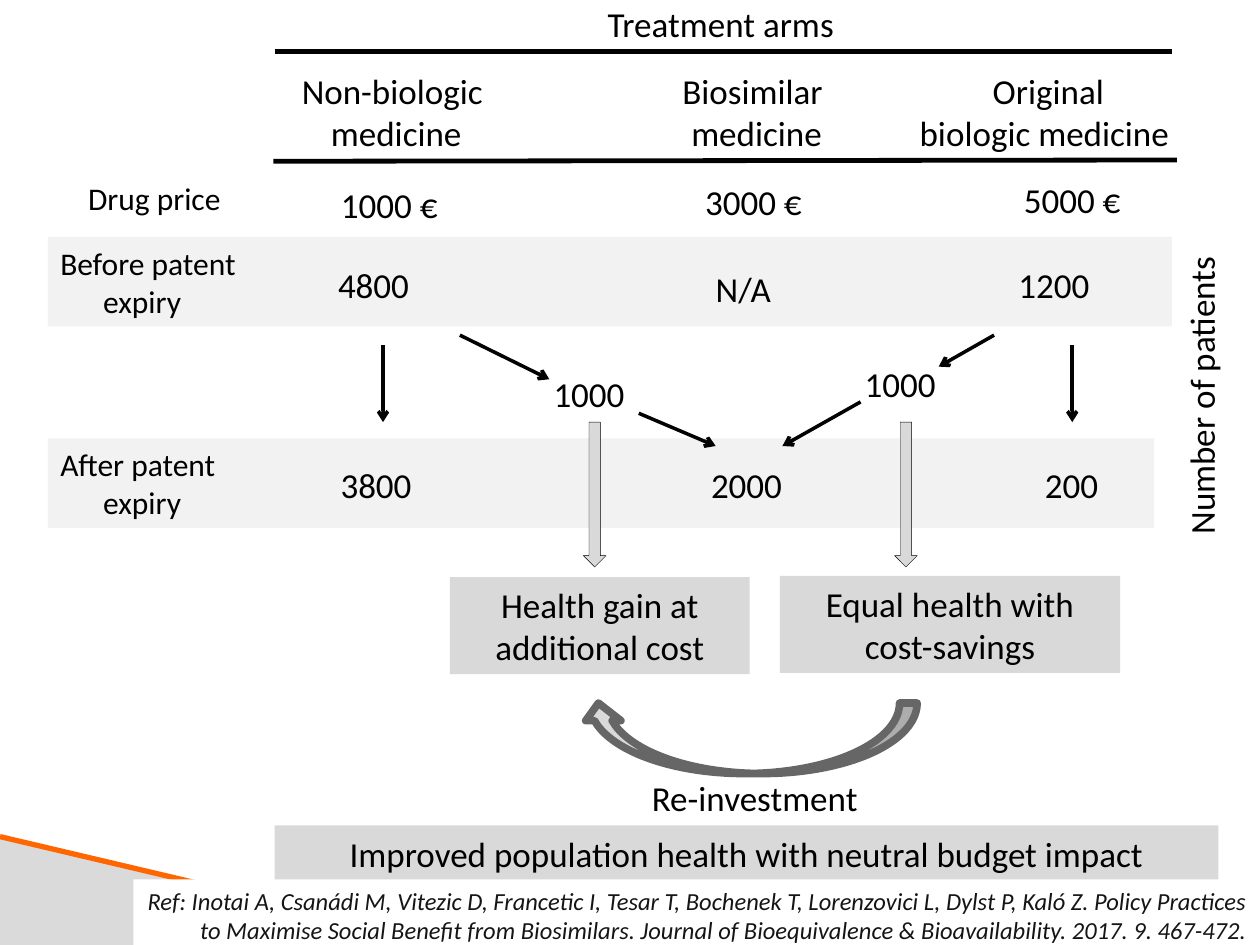
from lxml import etree
from pptx import Presentation
from pptx.dml.color import RGBColor
from pptx.enum.shapes import MSO_CONNECTOR, MSO_SHAPE
from pptx.enum.text import MSO_ANCHOR, MSO_AUTO_SIZE, PP_ALIGN
from pptx.oxml.ns import qn
from pptx.util import Inches, Pt

LEFT, CENTER, RIGHT = PP_ALIGN.LEFT, PP_ALIGN.CENTER, PP_ALIGN.RIGHT
RECTANGLE, TRIANGLE = MSO_SHAPE.RECTANGLE, MSO_SHAPE.RIGHT_TRIANGLE
DOWN_ARROW, CURVED_ARROW = MSO_SHAPE.DOWN_ARROW, MSO_SHAPE.CURVED_UP_ARROW
MIDDLE, TOP = MSO_ANCHOR.MIDDLE, MSO_ANCHOR.TOP
FIT_TEXT, STRAIGHT = MSO_AUTO_SIZE.SHAPE_TO_FIT_TEXT, MSO_CONNECTOR.STRAIGHT

COLUMNS, ROWS = 100, 75
WIDTH, HEIGHT = Inches(10), Inches(7.5)
FONT = "Calibri"
BLACK, INK, REFERENCE_INK = "000000", "020202", "151515"
WHITE, BAND, PANEL, CORNER = "FFFFFF", "F2F2F2", "D9D9D9", "DADADA"
ORANGE, DARK_GREY = "FF6600", "666666"
LINE_HEIGHT = 4.4


def color(value):
    return RGBColor.from_string(value)


class SlideBuilder:
    def __init__(self, slide):
        self.slide = slide

    def place(self, column, row):
        return round(column * WIDTH / COLUMNS), round(row * HEIGHT / ROWS)

    def set_text(self, shape, lines, size=20, align=CENTER, ink=BLACK,
                 italic=False, anchor=TOP, wrap=True, indent=0):
        frame = shape.text_frame
        frame.word_wrap = wrap
        frame.auto_size = FIT_TEXT
        frame.vertical_anchor = anchor
        for index, line in enumerate(lines):
            para = frame.add_paragraph() if index else frame.paragraphs[0]
            para.text = line
            para.alignment = align
            para.font.name = FONT
            para.font.size = Pt(size)
            para.font.italic = italic
            para.font.color.rgb = color(ink)
            if index and indent:
                para._p.get_or_add_pPr().set("marL", str(Inches(indent)))

    def shape(self, kind, column, row, columns, rows, fill, outline=None, weight=0):
        shape = self.slide.shapes.add_shape(
            kind, *self.place(column, row), *self.place(columns, rows))
        shape.shadow.inherit = False
        shape.fill.solid()
        shape.fill.fore_color.rgb = color(fill)
        if outline:
            shape.line.color.rgb = color(outline)
            shape.line.width = Pt(weight)
        else:
            shape.line.fill.background()
        return shape

    def panel(self, column, row, columns, rows, fill, lines, **style):
        panel = self.shape(RECTANGLE, column, row, columns, rows, fill)
        self.set_text(panel, lines, anchor=MIDDLE, **style)

    def text(self, column, row, columns, lines, rotation=0, **style):
        box = self.slide.shapes.add_textbox(
            *self.place(column, row),
            *self.place(columns, LINE_HEIGHT + 3.3 * (len(lines) - 1)))
        box.rotation = rotation
        self.set_text(box, lines, **style)

    def line(self, start, end, weight=2.0, ink=INK, arrow=False):
        line = self.slide.shapes.add_connector(
            STRAIGHT, *self.place(*start), *self.place(*end))
        line.line.color.rgb = color(ink)
        line.line.width = Pt(weight)
        if arrow:
            etree.SubElement(line.line._get_or_add_ln(), qn("a:tailEnd"), type="arrow")
        etree.SubElement(line._element.spPr, qn("a:effectLst"))


def main():
    deck = Presentation()
    deck.slide_width, deck.slide_height = WIDTH, HEIGHT
    page = SlideBuilder(deck.slides.add_slide(deck.slide_layouts[6]))

    page.shape(TRIANGLE, 0, 66.4, 37.2, 8.6, CORNER)
    page.line((0, 66.4), (36.5, 75), 3, ORANGE)

    for row, columns, period in ((18.8, 89.2, "Before patent"), (34.8, 87.8, "After patent")):
        page.panel(3.8, row, columns, 7.1, BAND, [period, "expiry"],
                   size=18, align=LEFT, indent=0.34)

    for column, columns, lines in (
        (22.9, 17.1, ["Non-biologic ", "medicine"]),
        (53.1, 13.9, ["Biosimilar ", "medicine"]),
        (67.1, 32.2, ["Original", "biologic medicine "]),
    ):
        page.text(column, 5, columns, lines, wrap=columns > 20)

    for column, row, columns, value in (
        (26, 14.1, 9.8, "1000 €"), (54.9, 13.8, 9.8, "3000 €"), (80.2, 13.7, 9.8, "5000 €"),
        (25.8, 20.4, 7.7, "4800"), (55.8, 20.7, 6.4, "N/A"), (79.8, 20.4, 7.7, "1200"),
        (42.9, 29.1, 7.7, "1000"), (67.6, 28.3, 7.7, "1000"),
        (26, 36.3, 7.7, "3800"), (55.4, 36.3, 7.7, "2000"), (81.9, 36.3, 6.3, "200"),
        (47.1, -0.3, 20.2, "Treatment arms"),
    ):
        page.text(column, row, columns, [value], wrap=False)
    page.text(5.9, 13.7, 12.7, ["Drug price"], size=18, wrap=False)
    page.text(83.2, 29.2, 24.3, ["Number of patients"], rotation=270, wrap=False)

    for start, end in (
        ((30.4, 27.4), (30.4, 33.5)), ((85.1, 27.4), (85.1, 33.5)),
        ((36.5, 26.6), (43.6, 30.1)), ((78.9, 26.6), (74.5, 29.1)),
        ((50.7, 32.8), (56.8, 35.4)), ((68.3, 31.9), (62.1, 35.4)),
    ):
        page.line(start, end, arrow=True)
    for start, end in (((21.8, 4.1), (93, 4.1)), ((21.7, 12.8), (93.4, 12.7))):
        page.line(start, end, 2.75)

    for column in (46.3, 71):
        page.shape(DOWN_ARROW, column, 33.5, 1.8, 11.5, PANEL, INK, 0.25)
    for column, row, columns, rows, outcome in (
        (35.7, 45.8, 23.8, 7.7, "Health gain at additional cost"),
        (61.9, 45.7, 27, 7.7, "Equal health with cost-savings"),
        (21.8, 65.5, 74.9, 4.4, "Improved population health with neutral budget impact"),
    ):
        page.panel(column, row, columns, rows, PANEL, [outcome])

    loop = page.shape(CURVED_ARROW, 46.1, 55.8, 26.7, 5.6, PANEL, DARK_GREY, 4.33)
    loop._element.spPr.xfrm.set("flipH", "1")
    page.text(44.9, 61.1, 30, ["Re-investment"])

    page.panel(10.6, 69.8, 89.4, 5.7, WHITE, [
        "Ref: Inotai A, Csanádi M, Vitezic D, Francetic I, Tesar T, Bochenek T, "
        "Lorenzovici L, Dylst P, Kaló Z. Policy Practices to Maximise Social Benefit "
        "from Biosimilars. Journal of Bioequivalence & Bioavailability. 2017. 9. 467-472."
    ], size=14, align=RIGHT, ink=REFERENCE_INK, italic=True)

    deck.save("out.pptx")


if __name__ == "__main__":
    main()
